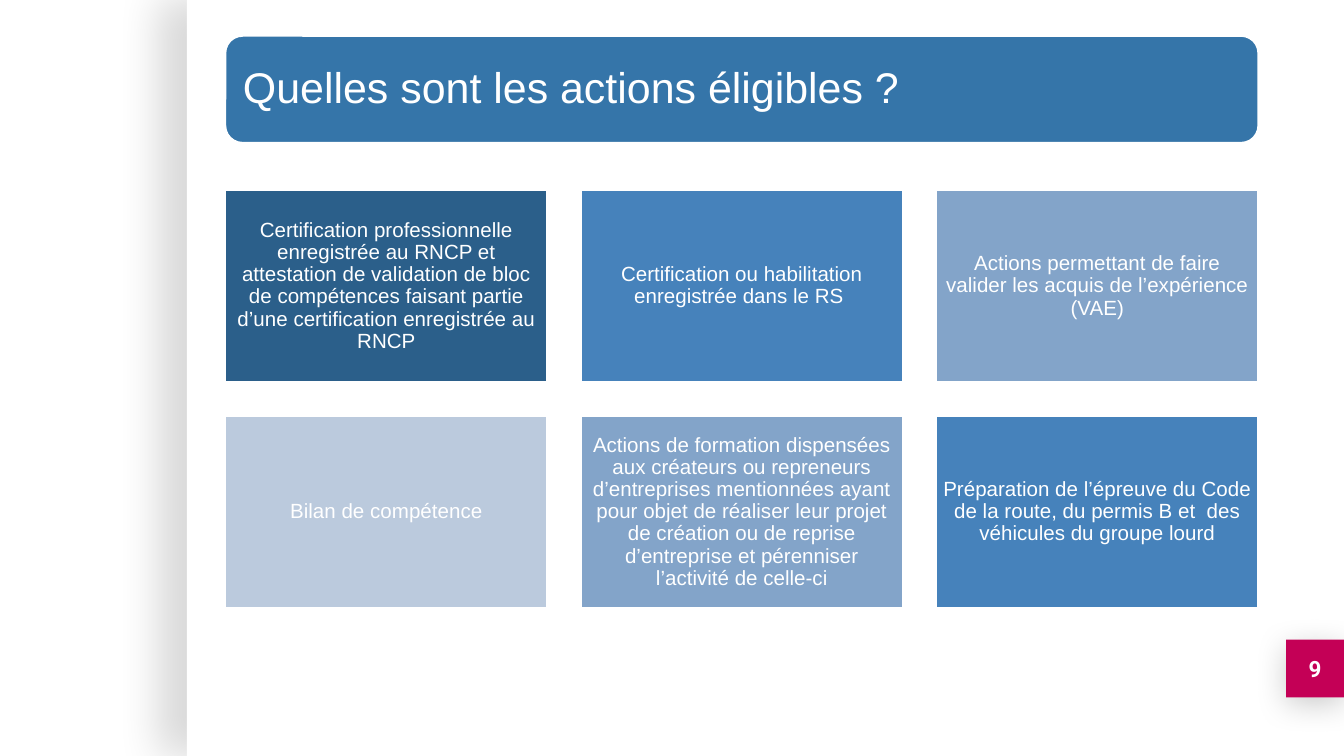
"""Build the slide listing the eligible training actions."""
from lxml import etree
from pptx import Presentation
from pptx.dml.color import RGBColor
from pptx.enum import shapes, text
from pptx.oxml import ns
from pptx.util import Pt

WHITE = RGBColor(0xFF, 0xFF, 0xFF)
BLACK = RGBColor(0x00, 0x00, 0x00)
MAGENTA = RGBColor(0xC4, 0x00, 0x56)
TITLE_BLUE = RGBColor(0x35, 0x75, 0xA9)
DARK_BLUE = RGBColor(0x2B, 0x5F, 0x8A)
MID_BLUE = RGBColor(0x46, 0x82, 0xBB)
SOFT_BLUE = RGBColor(0x83, 0xA4, 0xC9)
PALE_BLUE = RGBColor(0xBB, 0xCA, 0xDD)

LEFT, CARD_TOP = 120.24, 101.52
CARD_WIDTH, CARD_HEIGHT = 173.52, 103.68
COLUMN_STEP, ROW_STEP = 190.44, 120.96
COLUMNS = 3

prs = Presentation()
prs.slide_width, prs.slide_height = Pt(720), Pt(405)
slide = prs.slides.add_slide(prs.slide_layouts[6])


def add_block(bounds, fill, label="", size=11, font="Arial", margin=3.6,
              align=text.PP_ALIGN.CENTER, spacing=0.9, outlined=True,
              preset=shapes.MSO_SHAPE.RECTANGLE):
    block = slide.shapes.add_shape(preset, *map(Pt, bounds))
    block.shadow.inherit = False
    block.fill.solid()
    block.fill.fore_color.rgb = fill
    if outlined:
        block.line.color.rgb = WHITE
        block.line.width = Pt(2)
    else:
        block.line.fill.background()
    if label:
        frame = block.text_frame
        frame.text = label
        frame.word_wrap = True
        frame.vertical_anchor = text.MSO_ANCHOR.MIDDLE
        frame.margin_left = frame.margin_right = Pt(margin)
        frame.margin_top = frame.margin_bottom = Pt(margin)
        paragraph = frame.paragraphs[0]
        paragraph.alignment = align
        paragraph.line_spacing = spacing
        run_font = paragraph.runs[0].font
        run_font.name, run_font.size = font, Pt(size)
        run_font.color.rgb = WHITE
    return block


def cast_shadow(block, opacity, blur, distance, degrees):
    effects = block.element.spPr.find(ns.qn("a:effectLst"))
    shadow = etree.SubElement(
        effects, ns.qn("a:outerShdw"), blurRad=str(Pt(blur)),
        dist=str(Pt(distance)), dir=str(degrees * 60000),
        algn="ctr", rotWithShape="0")
    color = etree.SubElement(shadow, ns.qn("a:srgbClr"), val=str(BLACK))
    etree.SubElement(color, ns.qn("a:alpha"), val=str(opacity * 1000))


panel = add_block((100.08, 0, 619.92, 405), WHITE, outlined=False)
cast_shadow(panel, 15, 22.5, 15, 180)

page_number = add_block((689.04, 342.72, 30.96, 30.96), MAGENTA, "9", size=12,
                        font="Roboto", margin=7.2, spacing=1.0, outlined=False)
page_number.text_frame.paragraphs[0].runs[0].font.bold = True
cast_shadow(page_number, 20, 16.9, 3.8, 90)

add_block((LEFT, 18.72, 554.4, 58.32), TITLE_BLUE,
          "Quelles sont les actions éligibles ?", size=23, margin=7.2,
          align=text.PP_ALIGN.LEFT, preset=shapes.MSO_SHAPE.ROUNDED_RECTANGLE)

actions = [
    (DARK_BLUE, "Certification professionnelle enregistrée au RNCP et attestation "
                "de validation de bloc de compétences faisant partie d’une "
                "certification enregistrée au RNCP"),
    (MID_BLUE, "Certification ou habilitation enregistrée dans le RS "),
    (SOFT_BLUE, "Actions permettant de faire valider les acquis de l’expérience (VAE)"),
    (PALE_BLUE, "Bilan de compétence"),
    (SOFT_BLUE, "Actions de formation dispensées aux créateurs ou repreneurs "
                "d’entreprises mentionnées ayant pour objet de réaliser leur projet "
                "de création ou de reprise d’entreprise et pérenniser l’activité "
                "de celle-ci"),
    (MID_BLUE, "Préparation de l’épreuve du Code de la route, du permis B et  des "
               "véhicules du groupe lourd"),
]
for index, (fill, action) in enumerate(actions):
    row, column = divmod(index, COLUMNS)
    add_block((LEFT + column * COLUMN_STEP, CARD_TOP + row * ROW_STEP,
               CARD_WIDTH, CARD_HEIGHT), fill, action)

prs.save("out.pptx")
